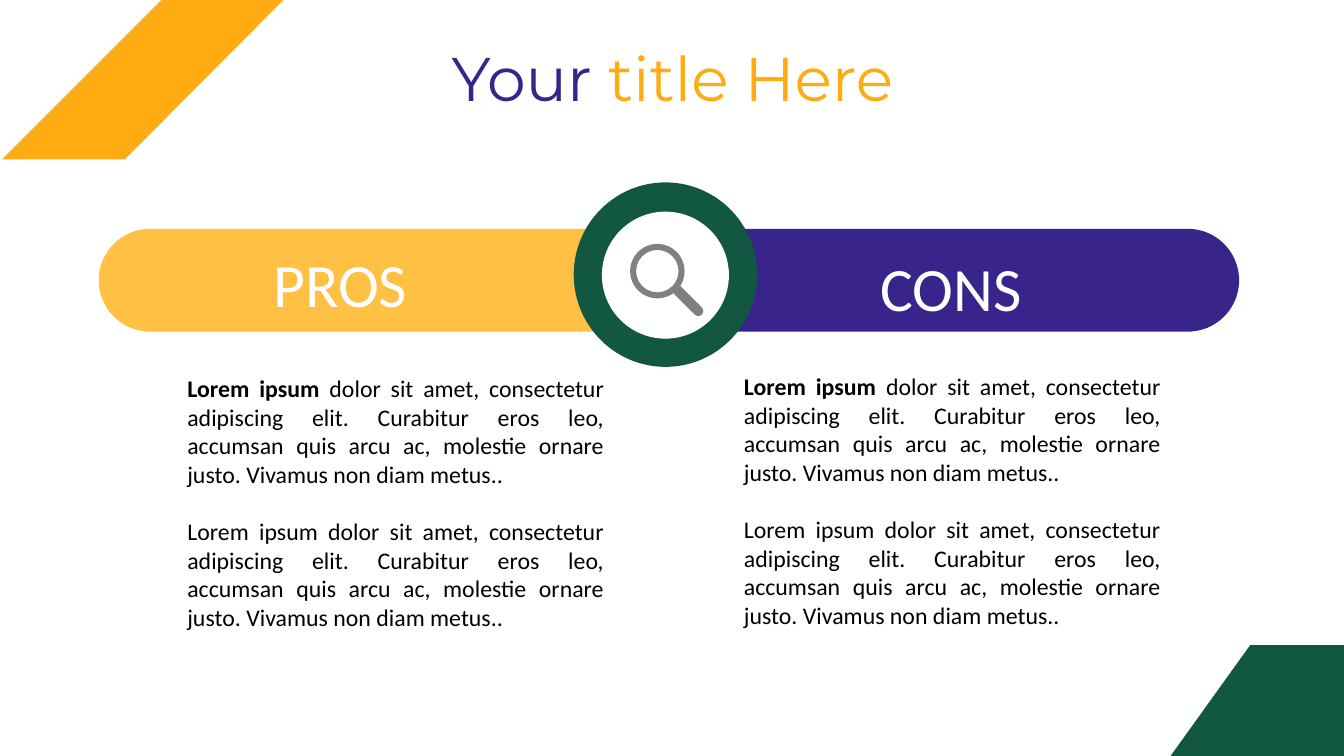
from math import cos, pi, sin

from pptx import Presentation
from pptx.dml.color import RGBColor
from pptx.enum.shapes import MSO_SHAPE
from pptx.enum.text import MSO_ANCHOR, PP_ALIGN
from pptx.util import Inches, Pt

OVAL, DONUT, ROUND = MSO_SHAPE.OVAL, MSO_SHAPE.DONUT, MSO_SHAPE.ROUNDED_RECTANGLE
TOP, MIDDLE = MSO_ANCHOR.TOP, MSO_ANCHOR.MIDDLE
CENTER, JUSTIFY = PP_ALIGN.CENTER, PP_ALIGN.JUSTIFY

COLORS = {
    "orange": "FEAC11", "amber": "FFC043", "purple": "38248A", "green": "125742",
    "gray": "808080", "white": "FFFFFF", "black": "000000",
}
WIDTH, HEIGHT = 13.33, 7.5
LEAD = "Lorem ipsum "
REST = ("dolor sit amet, consectetur adipiscing elit. Curabitur eros leo, "
        "accumsan quis arcu ac, molestie ornare justo. Vivamus non diam metus..")

# Each run is (text, color, bold)
TITLE = [[("Your ", "purple", False), ("title Here", "orange", False)]]
BODY = [
    [(LEAD, "black", True), (REST, "black", False)],
    [(LEAD + REST, "black", False)],
]
# Heading, color, inner end, outer end, heading place, body place
SIDES = [
    ("PROS", "amber", 6.2, 0.98, (1.73, 2.39), (1.76, 3.66)),
    ("CONS", "purple", 7.08, 12.29, (7.79, 2.43), (7.28, 3.64)),
]
BAR_TOP, BAR_HIGH = 2.27, 1.02
CORNERS = [
    ("orange", [(1.6, 0), (0.02, 1.58), (1.24, 1.58), (2.81, 0)]),
    ("green", [(WIDTH, 6.4), (12.4, 6.4), (11.61, HEIGHT), (WIDTH, HEIGHT)]),
]
# Kind, color, place and size, corner or ring ratio, turn
BADGE = [
    (OVAL, "green", (5.69, 1.81, 1.82, 1.83), None, 0),
    (OVAL, "white", (5.97, 2.1, 1.26, 1.26), None, 0),
    (DONUT, "gray", (6.25, 2.42, 0.54, 0.54), 0.11, 0),
    (ROUND, "gray", (6.62, 2.93, 0.4, 0.1), 0.5, 45),
]


def paint(shape, color):
    shape.shadow.inherit = False
    shape.fill.solid()
    shape.fill.fore_color.rgb = RGBColor.from_string(COLORS[color])
    shape.line.fill.background()


def add_outline(slide, points, color):
    spots = [(Inches(x), Inches(y)) for x, y in points]
    pen = slide.shapes.build_freeform(*spots[0])
    pen.add_line_segments(spots[1:], close=True)
    paint(pen.convert_to_shape(), color)


def add_bar(slide, inner, outer, color):
    """Draw a bar with a square inner end and a half-round outer end."""
    radius = BAR_HIGH / 2
    way = 1 if outer > inner else -1
    hub, mid = outer - way * radius, BAR_TOP + radius
    turns = [pi * step / 48 - pi / 2 for step in range(49)]
    arc = [(hub + way * radius * cos(t), mid + radius * sin(t)) for t in turns]
    ends = [(inner, BAR_TOP + BAR_HIGH), (inner, BAR_TOP)]
    add_outline(slide, arc + ends, color)


def add_text(slide, place, paras, size, font, align, anchor=TOP, gap=0, lines=1.0):
    frame = slide.shapes.add_textbox(*map(Inches, place)).text_frame
    frame.word_wrap = True
    frame.vertical_anchor = anchor
    for index, runs in enumerate(paras):
        para = frame.add_paragraph() if index else frame.paragraphs[0]
        para.alignment = align
        para.line_spacing = lines
        para.space_before = Pt(gap if index else 0)
        for text, color, bold in runs:
            run = para.add_run()
            run.text = text
            run.font.name = font
            run.font.size = Pt(size)
            run.font.bold = bold
            run.font.color.rgb = RGBColor.from_string(COLORS[color])


def main():
    deck = Presentation()
    deck.slide_width, deck.slide_height = Inches(WIDTH), Inches(HEIGHT)
    slide = deck.slides.add_slide(deck.slide_layouts[6])

    for _, color, inner, outer, _, _ in SIDES:
        add_bar(slide, inner, outer, color)

    for kind, color, place, ratio, turn in BADGE:
        part = slide.shapes.add_shape(kind, *map(Inches, place))
        if ratio is not None:
            part.adjustments[0] = ratio
        part.rotation = turn
        paint(part, color)

    for head, _, _, _, spot, body in SIDES:
        add_text(slide, (*spot, 3.29, 0.84), [[(head, "white", False)]],
                 44, "Calibri", CENTER)
        add_text(slide, (*body, 4.33, 2.95), BODY, 17, "Calibri", JUSTIFY, gap=20.5)

    for color, points in CORNERS:
        add_outline(slide, points, color)

    add_text(slide, (0.92, 0.4, 11.5, 0.81), TITLE, 44, "Montserrat", CENTER,
             anchor=MIDDLE, lines=0.9)
    deck.save("out.pptx")


if __name__ == "__main__":
    main()
